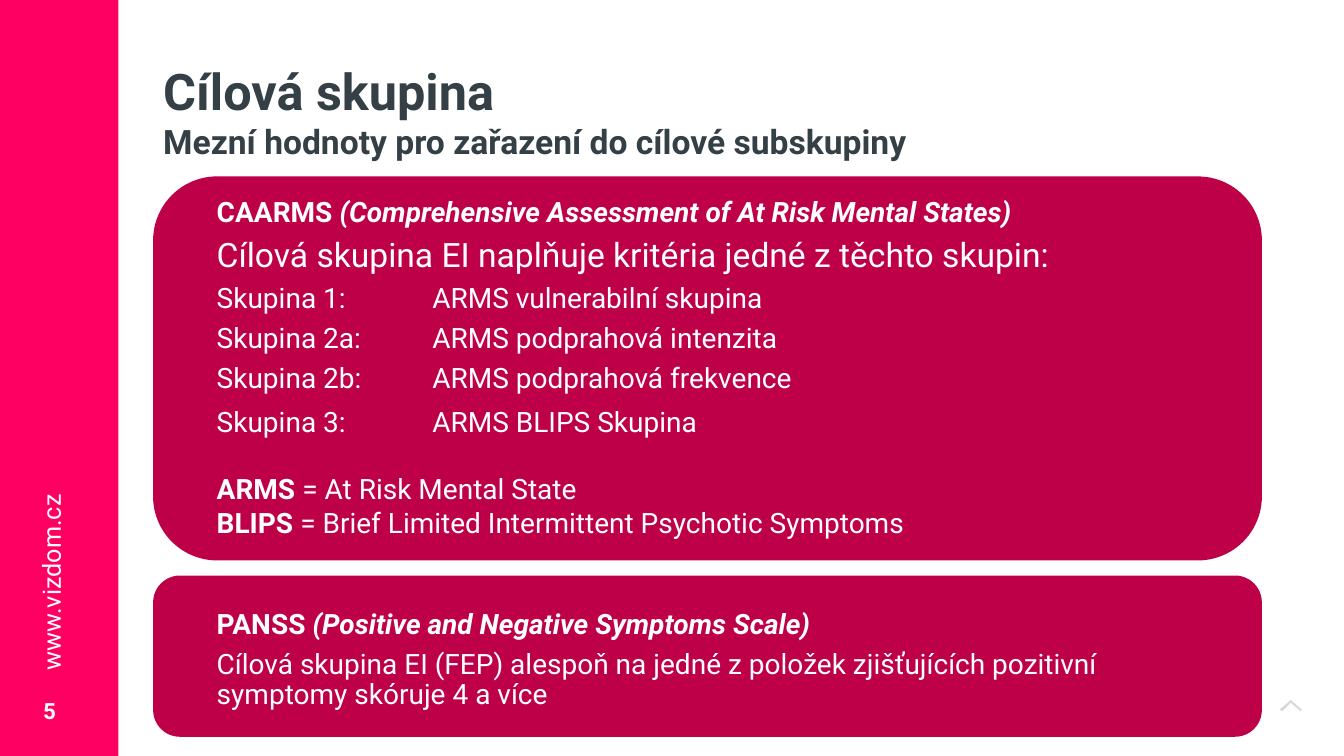
"""Build the slide on threshold values for the target group."""
import pptx
import pptx.util
import pptx.dml.color
import pptx.enum.shapes
import pptx.enum.text
import pptx.oxml.ns
import lxml.etree

Pt = pptx.util.Pt
SHAPE = pptx.enum.shapes.MSO_SHAPE
ANCHOR = pptx.enum.text.MSO_ANCHOR
FONT = "Roboto"
COLORS = {"pink": "FE0061", "crimson": "BE0049", "dark": "344046", "white": "FFFFFF"}

TITLE = [("Cílová skupina", 36), ("Mezní hodnoty pro zařazení do cílové subskupiny", 24)]
SITE = "www.vizdom.cz"
PAGE = "5"

TIGHT = {"line": 0.9, "after": 7}
PLAIN = {"line": 1, "after": 0}
GROUPS = [
    ("Skupina 1:", "ARMS vulnerabilní skupina", TIGHT),
    ("Skupina 2a:", "ARMS podprahová intenzita", TIGHT),
    ("Skupina 2b:", "ARMS podprahová frekvence", TIGHT),
    ("Skupina 3:", "ARMS BLIPS Skupina", PLAIN),
]
CAARMS = [
    ([("CAARMS ", 20, "b"), ("(Comprehensive Assessment of At Risk Mental States)", 20, "bi")], TIGHT),
    ([("Cílová skupina EI naplňuje kritéria jedné z těchto skupin:", 24, "")], TIGHT),
    *[([(f"{name}\t{meaning}", 20, "")], spacing) for name, meaning, spacing in GROUPS],
    ([("ARMS ", 20, "b"), ("= At Risk Mental State", 20, "")], {**PLAIN, "before": 24}),
    ([("BLIPS ", 20, "b"), ("= Brief Limited Intermittent Psychotic Symptoms", 20, "")], PLAIN),
]
PANSS = [
    ([("PANSS ", 20, "b"), ("(Positive and Negative Symptoms Scale)", 20, "bi")], TIGHT),
    ([("Cílová skupina EI (FEP) alespoň na jedné z položek zjišťujících "
       "pozitivní symptomy skóruje 4 a více", 20, "")], TIGHT),
]
CARDS = [
    {"top": 126, "height": 274.3, "text_top": 136.8, "text_height": 252.7, "content": CAARMS},
    {"top": 411.1, "height": 115.2, "text_top": 426.2, "text_height": 91.4, "content": PANSS},
]
CARD_LEFT, CARD_WIDTH = 109.4, 792
TEXT_LEFT, TEXT_WIDTH = 148.3, 715
GROUP_TAB = 154
CHEVRON = [(922.3, 499.7), (929.5, 506.9), (928.8, 507.6), (922.3, 501.8),
           (915.8, 507.6), (914.4, 506.9)]


def rgb(name):
    return pptx.dml.color.RGBColor.from_string(COLORS[name])


def paint(sp, color):
    sp.shadow.inherit = False
    sp.fill.solid()
    sp.fill.fore_color.rgb = rgb(color)
    sp.line.fill.background()


def add_run(p, text, size, style="", color="white"):
    r = p.add_run()
    r.text = text
    r.font.name = FONT
    r.font.size = Pt(size)
    r.font.bold = "b" in style
    r.font.italic = "i" in style
    r.font.color.rgb = rgb(color)


def add_tab(p, position):
    pPr = p._p.get_or_add_pPr()
    tabs = lxml.etree.SubElement(pPr, pptx.oxml.ns.qn("a:tabLst"))
    lxml.etree.SubElement(tabs, pptx.oxml.ns.qn("a:tab"), pos=str(Pt(position)), algn="l")


def add_text(s, left, top, width, height, content, anchor=ANCHOR.TOP):
    sp = s.shapes.add_textbox(Pt(left), Pt(top), Pt(width), Pt(height))
    tf = sp.text_frame
    tf.word_wrap = True
    tf.vertical_anchor = anchor
    for i, (runs, spacing) in enumerate(content):
        p = tf.paragraphs[0] if i == 0 else tf.add_paragraph()
        p.line_spacing = spacing["line"]
        p.space_before = Pt(spacing.get("before", 0))
        p.space_after = Pt(spacing["after"])
        if any("\t" in text for text, size, style in runs):
            add_tab(p, GROUP_TAB)
        for text, size, style in runs:
            add_run(p, text, size, style)
    return sp


def add_title(s):
    sp = s.shapes.title
    sp.left, sp.top, sp.width, sp.height = Pt(109.4), Pt(39.6), Pt(667.4), Pt(128.2)
    tf = sp.text_frame
    tf.word_wrap = True
    tf.auto_size = pptx.enum.text.MSO_AUTO_SIZE.NONE
    tf.vertical_anchor = ANCHOR.TOP
    for i, (text, size) in enumerate(TITLE):
        p = tf.paragraphs[0] if i == 0 else tf.add_paragraph()
        p.alignment = pptx.enum.text.PP_ALIGN.LEFT
        add_run(p, text, size, "b", "dark")


def add_chevron(s):
    builder = s.shapes.build_freeform(*CHEVRON[0], scale=Pt(1))
    builder.add_line_segments(CHEVRON[1:], close=True)
    sp = builder.convert_to_shape()
    paint(sp, "dark")
    color = sp.fill._xPr.find(".//" + pptx.oxml.ns.qn("a:srgbClr"))
    lxml.etree.SubElement(color, pptx.oxml.ns.qn("a:alpha"), val="20000")


def add_sidebar(s):
    sp = s.shapes.add_shape(SHAPE.RECTANGLE, 0, 0, Pt(84.6), Pt(540))
    paint(sp, "pink")
    add_text(s, 23.8, 486, 36, 43.2, [([(PAGE, 16, "b")], PLAIN)], ANCHOR.MIDDLE)
    site = add_text(s, -49, 385.2, 171.4, 29.5, [([(SITE, 18, "")], PLAIN)])
    site.rotation = 270


def add_card(s, card):
    sp = s.shapes.add_shape(SHAPE.ROUNDED_RECTANGLE, Pt(CARD_LEFT), Pt(card["top"]),
                            Pt(CARD_WIDTH), Pt(card["height"]))
    paint(sp, "crimson")
    text = add_text(s, TEXT_LEFT, card["text_top"], TEXT_WIDTH, card["text_height"],
                    card["content"], ANCHOR.MIDDLE)
    tf = text.text_frame
    tf.margin_left = tf.margin_right = tf.margin_top = tf.margin_bottom = Pt(6.5)


def main():
    prs = pptx.Presentation()
    prs.slide_width, prs.slide_height = Pt(960), Pt(540)
    s = prs.slides.add_slide(prs.slide_layouts[5])
    add_chevron(s)
    add_sidebar(s)
    add_title(s)
    for card in CARDS:
        add_card(s, card)
    prs.save("out.pptx")


if __name__ == "__main__":
    main()
